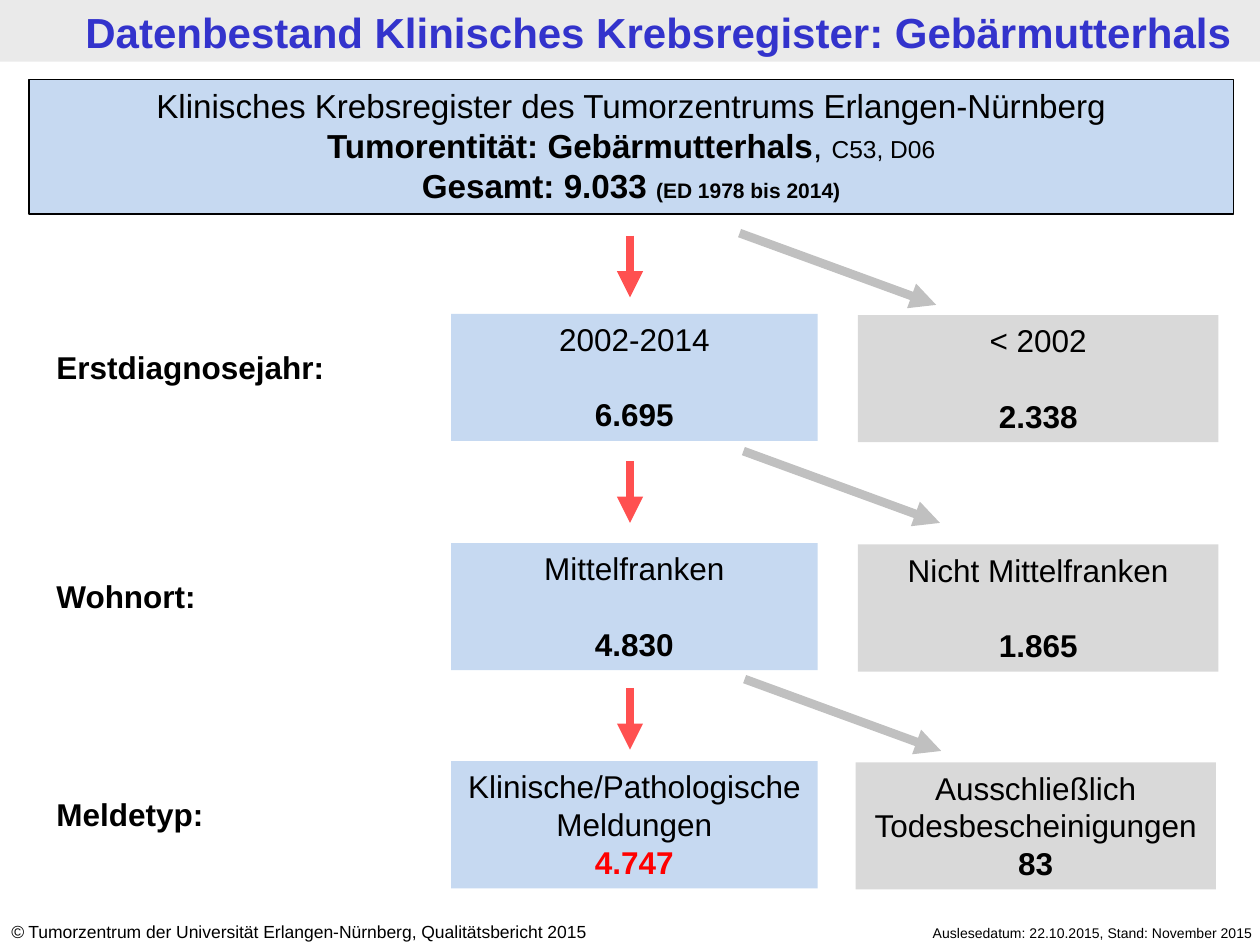
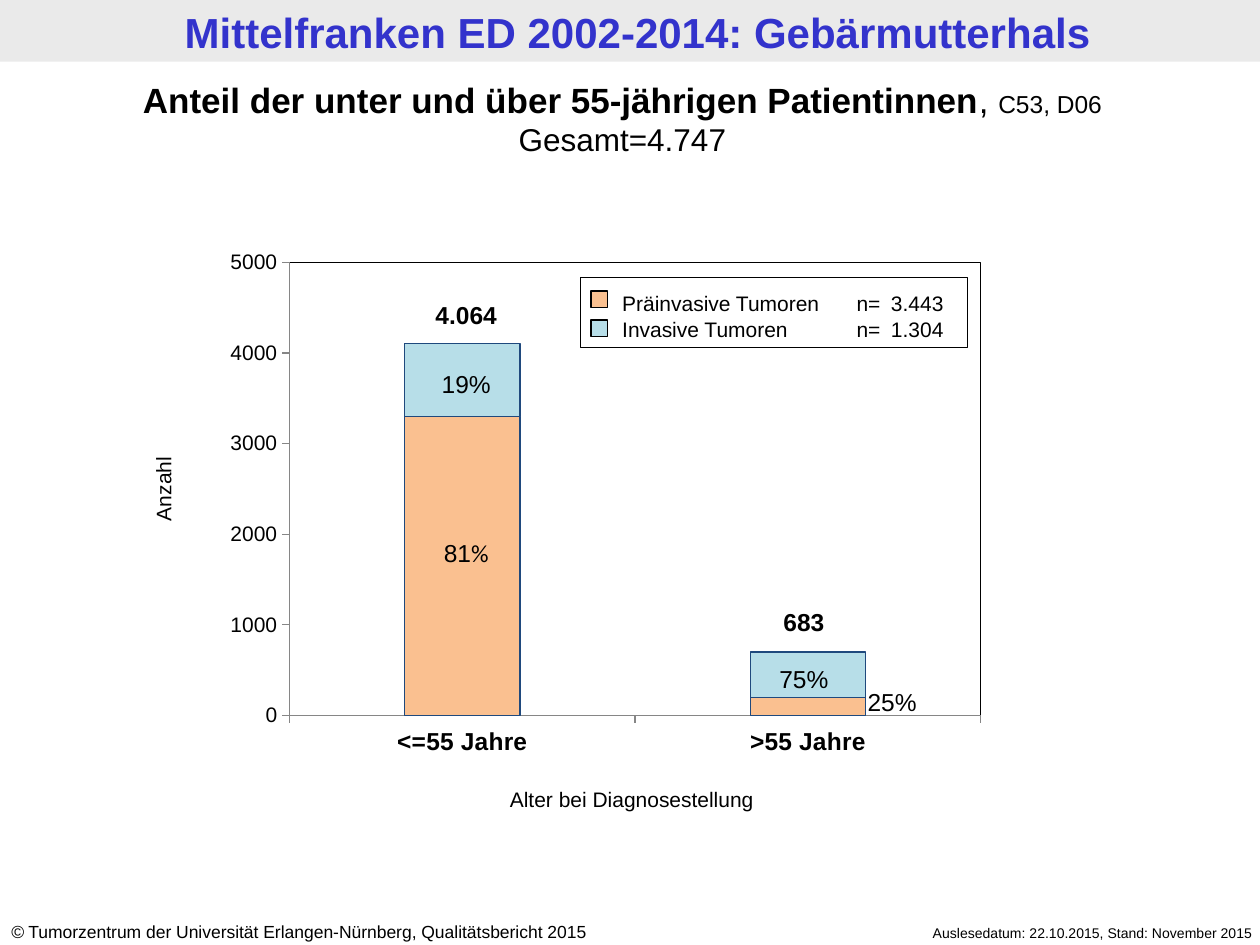
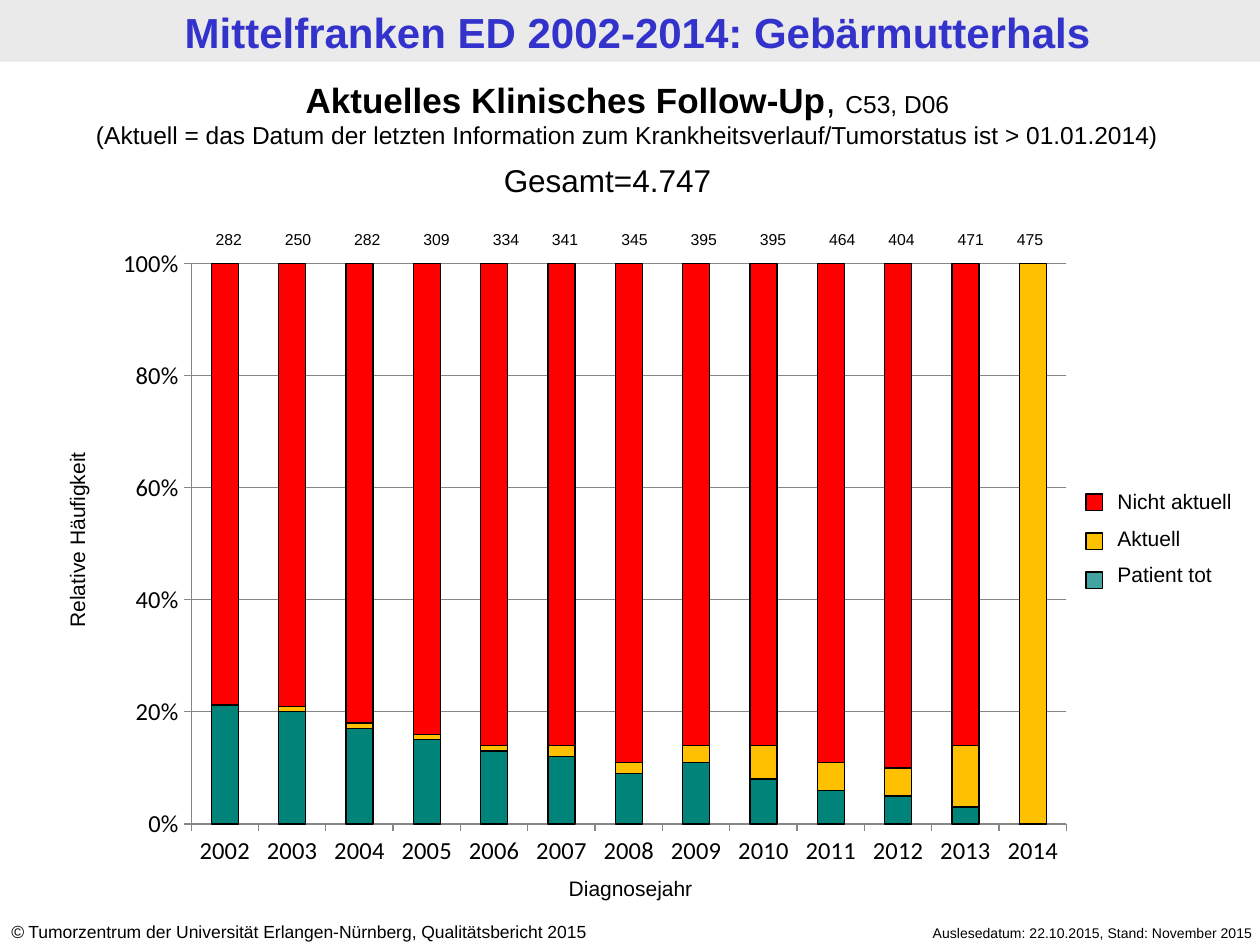
from itertools import accumulate

from pptx import Presentation
from pptx.chart.data import CategoryChartData
from pptx.dml.color import RGBColor
from pptx.enum.chart import XL_CHART_TYPE as ChartType, XL_TICK_MARK as TickMark
from pptx.enum.shapes import MSO_CONNECTOR as Connector, MSO_SHAPE as Shape
from pptx.enum.text import MSO_ANCHOR as Anchor, MSO_AUTO_SIZE as AutoSize, PP_ALIGN as Align
from pptx.oxml import parse_xml
from pptx.oxml.ns import nsdecls, qn
from pptx.util import Emu, Inches, Pt

COLORS = {
    "black": "000000", "title": "3333CC", "band": "EAEAEA",
    "included": "C6D9F1", "excluded": "D9D9D9",
    "down arrow": "FF5050", "side arrow": "C0C0C0", "result": "FF0000",
    "preinvasive": "FAC090", "invasive": "B7DEE8", "bar outline": "1F497D",
    "dead": "008378", "dead key": "008380", "current": "FFC000",
    "outdated": "FF0000", "axis": "868686",
}
FONT = "Arial"
COLUMNS, ROWS = 100, 75
BOLD = {"bold": True}
SMALL = {"size": 14}
TUMOR_CODES = [(", ", {}), ("C53, D06", SMALL)]
TOTAL = "Gesamt=4.747"


def rgb(name):
    return RGBColor.from_string(COLORS[name])


def format_font(font, **values):
    values = {"name": FONT, "color": "black", **values}
    font.color.rgb = rgb(values.pop("color"))
    if "size" in values:
        values["size"] = Pt(values["size"])
    for attribute, value in values.items():
        setattr(font, attribute, value)


def format_line(line, color, width=0.75):
    line.color.rgb = rgb(color)
    line.width = Pt(width)


class Deck:
    """Holds the shared style and the current slide; lengths are grid columns and rows."""

    def __init__(self):
        self.presentation = Presentation()
        self.presentation.slide_width = Inches(10)
        self.presentation.slide_height = Inches(7.5)
        self.slide = None

    def place(self, column, row):
        return (Emu(round(column * self.presentation.slide_width / COLUMNS)),
                Emu(round(row * self.presentation.slide_height / ROWS)))

    def frame(self, box):
        return *self.place(*box[:2]), *self.place(*box[2:])

    def new_slide(self, title, title_box=(0.6, 0.1, 100, 4.9)):
        self.slide = self.presentation.slides.add_slide(self.presentation.slide_layouts[5])
        placeholder = self.slide.shapes.title
        band = self.rectangle((0, 0, 100, 4.9), "band")
        placeholder.element.addprevious(band.element)
        for side, length in zip(("left", "top", "width", "height"), self.frame(title_box)):
            setattr(placeholder, side, length)
        self.set_text(placeholder, [title], margins=(0.09, 0.04),
                      size=24, bold=True, color="title")
        self.text((66.5, 72.9, 33.9, 2.4),
                  ["Auslesedatum: 22.10.2015, Stand: November 2015"], Align.RIGHT, size=8)
        self.text((-0.1, 72.6, 52.4, 2.7), [[
            ("©", {"italic": True}),
            (" Tumorzentrum der Universität Erlangen-Nürnberg, Qualitätsbericht 2015", {}),
        ]], Align.LEFT, size=10)

    def set_text(self, shape, paragraphs, align=Align.CENTER, gap=0, tabs=(),
                 margins=(0.1, 0.05), **base):
        """Fill a shape; a paragraph is a string or a list of (text, format) runs."""
        frame = shape.text_frame
        across, down = map(Inches, margins)
        settings = {
            "word_wrap": True, "auto_size": AutoSize.NONE, "vertical_anchor": Anchor.TOP,
            "margin_left": across, "margin_right": across,
            "margin_top": down, "margin_bottom": down,
        }
        for attribute, value in settings.items():
            setattr(frame, attribute, value)
        for index, runs in enumerate(paragraphs):
            paragraph = frame.add_paragraph() if index else frame.paragraphs[0]
            if tabs:
                stops = "".join(f'<a:tab pos="{Inches(stop)}" algn="{side}"/>'
                                for stop, side in tabs)
                paragraph._p.get_or_add_pPr().append(
                    parse_xml(f"<a:tabLst {nsdecls('a')}>{stops}</a:tabLst>"))
            paragraph.alignment = align
            if index and gap:
                paragraph.space_before = Pt(gap)
            for text, values in [(runs, {})] if isinstance(runs, str) else runs:
                run = paragraph.add_run()
                run.text = text
                format_font(run.font, **{**base, **values})

    def text(self, box, paragraphs, align=Align.CENTER, rotation=0, **style):
        shape = self.slide.shapes.add_textbox(*self.frame(box))
        shape.rotation = rotation
        self.set_text(shape, paragraphs, align, **style)

    def rectangle(self, box, fill=None, line=None, alpha=None):
        shape = self.slide.shapes.add_shape(Shape.RECTANGLE, *self.frame(box))
        shape.shadow.inherit = False
        if fill:
            shape.fill.solid()
            shape.fill.fore_color.rgb = rgb(fill)
        else:
            shape.fill.background()
        if alpha:
            color = shape.element.spPr.find(qn("a:solidFill"))[0]
            color.append(parse_xml(f'<a:alpha {nsdecls("a")} val="{alpha * 1000}"/>'))
        if line:
            format_line(shape.line, line)
        else:
            shape.line.fill.background()
        return shape

    def key(self, column, row, fill, alpha=None):
        self.rectangle((column, row, 1.3, 1.3), fill, "black", alpha)

    def arrow(self, start, across, down, color):
        end = start[0] + across, start[1] + down
        arrow = self.slide.shapes.add_connector(
            Connector.STRAIGHT, *self.place(*start), *self.place(*end))
        format_line(arrow.line, color, 5)
        properties = arrow.element.spPr
        properties.find(qn("a:ln")).append(
            parse_xml(f'<a:tailEnd {nsdecls("a")} type="triangle"/>'))
        properties.append(parse_xml(f"<a:effectLst {nsdecls('a')}/>"))

    def chart(self, box, kind, categories, series, outline, gap, unit, number_format,
              category_font, value_font):
        """Add a stacked column chart; series holds (values, color) pairs."""
        data = CategoryChartData()
        data.categories = categories
        for number, (values, _) in enumerate(series, 1):
            data.add_series(f"Series {number}", values)
        chart = self.slide.shapes.add_chart(kind, *self.frame(box), data).chart
        chart.has_title = chart.has_legend = False
        format_font(chart.font, name="Calibri", size=18)
        plot = chart.plots[0]
        plot.gap_width, plot.overlap, plot.vary_by_categories = gap, 100, False
        for bars, (_, color) in zip(plot.series, series):
            bars.invert_if_negative = False
            bars.format.fill.solid()
            bars.format.fill.fore_color.rgb = rgb(color)
            format_line(bars.format.line, outline)
        for axis, font in ((chart.category_axis, category_font),
                           (chart.value_axis, value_font)):
            axis.major_tick_mark, axis.minor_tick_mark = TickMark.OUTSIDE, TickMark.NONE
            axis.has_major_gridlines = False
            format_line(axis.format.line, "axis")
            format_font(axis.tick_labels.font, **font)
        chart.value_axis.minimum_scale = 0
        chart.value_axis.major_unit = unit
        labels = chart.value_axis.tick_labels
        labels.number_format, labels.number_format_is_linked = number_format, False
        return chart


def frame_plot(chart, **shares):
    """Fix the inner plot area as shares of the chart and outline it."""
    plot_area = chart.element.xpath("c:chart/c:plotArea")[0]
    for layout in plot_area.findall(qn("c:layout")):
        plot_area.remove(layout)
    sizes = "".join(f'<c:{name} val="{share}"/>' for name, share in shares.items())
    plot_area.insert(0, parse_xml(
        f'<c:layout {nsdecls("c")}><c:manualLayout><c:layoutTarget val="inner"/>'
        f'<c:xMode val="edge"/><c:yMode val="edge"/>{sizes}</c:manualLayout></c:layout>'))
    plot_area.append(parse_xml(
        f'<c:spPr {nsdecls("c", "a")}><a:noFill/><a:ln w="{Pt(0.75)}"><a:solidFill>'
        f'<a:srgbClr val="{COLORS["black"]}"/></a:solidFill></a:ln></c:spPr>'))


def build_selection(deck):
    deck.new_slide("Datenbestand Klinisches Krebsregister: Gebärmutterhals",
                   (3.4, 0.1, 97.7, 4.9))
    register = deck.rectangle((2.3, 6.3, 95.6, 10.7), "included", "black")
    deck.set_text(register, [
        "Klinisches Krebsregister des Tumorzentrums Erlangen-Nürnberg",
        [("Tumorentität: Gebärmutterhals", BOLD), *TUMOR_CODES],
        [("Gesamt: 9.033 ", BOLD), ("(ED 1978 bis 2014)", {"size": 12, **BOLD})],
    ], size=19)

    blank_line = 21.5
    steps = [
        # label, row, included, excluded, excluded column, gap, arrow row, side arrow start
        ("Erstdiagnosejahr:", 24.9, ("2002-2014", "6.695"), ("< 2002", "2.338"),
         68.1, blank_line, 18.7, (58.7, 18.5)),
        ("Wohnort:", 43.1, ("Mittelfranken", "4.830"), ("Nicht Mittelfranken", "1.865"),
         68.1, blank_line, 36.6, (59, 35.8)),
        ("Meldetyp:", 60.4, ("Klinische/Pathologische Meldungen", "4.747"),
         ("Ausschließlich Todesbescheinigungen", "83"), 67.9, 0, 54.6, (59.1, 53.9)),
    ]
    for label, row, included, excluded, column, gap, arrow_row, side_start in steps:
        deck.text((3.5, row + 2.2, 27.6, 4), [label], Align.LEFT, size=18, bold=True)
        count_color = "result" if label == steps[-1][0] else "black"
        for box, fill, (group, count), color in (
                ((35.8, row, 29.1, 10.1), "included", included, count_color),
                ((column, row + 0.1, 28.6, 10.1), "excluded", excluded, "black")):
            deck.set_text(deck.rectangle(box, fill),
                          [group, [(count, {"color": color, **BOLD})]], gap=gap, size=18)
        deck.arrow((50, arrow_row), 0, 4.9, "down arrow")
        deck.arrow(side_start, 15.6, 5.7, "side arrow")


def build_age_groups(deck):
    deck.new_slide("Mittelfranken ED 2002-2014: Gebärmutterhals")
    chart = deck.chart(
        (15.1, 14.2, 69.8, 46.6), ChartType.COLUMN_STACKED, ["<=55 Jahre", ">55 Jahre"],
        [((3300, 200), "preinvasive"), ((800, 500), "invasive")],
        "bar outline", 200, 1000, "0", {"size": 14, **BOLD}, {"size": 12})
    chart.value_axis.maximum_scale = 5000
    frame_plot(chart, x=0.113, y=0.142, w=0.786, h=0.772)
    deck.text((0, 5.7, 98.8, 7.4), [
        [("Anteil der unter und über 55-jährigen Patientinnen", BOLD), *TUMOR_CODES],
        [(TOTAL, {"size": 18})],
    ], size=20)

    for column, row, runs in (
            (31.9, 42.2, [("81", {}), ("%", {"name": "Calibri"})]),
            (31.9, 28.8, "19%"),
            (31.9, 23.3, [("4.064", BOLD)]),
            (65.7, 54, "25%"),
            (58.7, 52.2, "75%"),
            (58.7, 47.7, [("683", BOLD)])):
        deck.text((column, row, 10.2, 3.4), [runs], size=14)
    deck.text((33.5, 61.9, 33.3, 3), ["Alter bei Diagnosestellung"], size=12)
    deck.text((-0.1, 37.3, 26.1, 3), ["Anzahl"], rotation=270, size=12)

    deck.rectangle((46.1, 22, 30.7, 5.6), line="black")
    deck.text((48.4, 22.6, 28, 5),
              ["Präinvasive Tumoren\tn=\t3.443", "Invasive Tumoren\tn=\t1.304"],
              Align.LEFT, tabs=((1.86, "l"), (2.55, "r")), size=12)
    deck.key(46.9, 23.1, "preinvasive")
    deck.key(46.9, 25.4, "invasive")


def build_follow_up(deck):
    deck.new_slide("Mittelfranken ED 2002-2014: Gebärmutterhals")
    years = range(2002, 2015)
    chart = deck.chart(
        (8.2, 18.7, 78, 51.1), ChartType.COLUMN_STACKED_100, [str(year) for year in years],
        [((21, 20, 17, 15, 13, 12, 9, 11, 8, 6, 5, 3, 0), "dead"),
         ((0, 1, 1, 1, 1, 2, 2, 3, 6, 5, 5, 11, 100), "current"),
         ((78, 79, 82, 84, 86, 86, 89, 86, 86, 89, 90, 86, 0), "outdated")],
        "black", 150, 0.2, "0%", *[{"size": 14, "name": "Calibri"}] * 2)
    chart.value_axis.has_major_gridlines = True
    format_line(chart.value_axis.major_gridlines.format.line, "axis")

    deck.text((-0.4, 5.7, 100.4, 6.7), [
        [("Aktuelles Klinisches Follow-Up", BOLD), *TUMOR_CODES],
        [("(Aktuell = das Datum der letzten Information zum "
          "Krankheitsverlauf/Tumorstatus ist > 01.01.2014)", SMALL)],
    ], size=20)
    deck.text((39, 12.3, 22, 4), [TOTAL], Align.LEFT, size=18)
    deck.text((-5.9, 41.3, 24.1, 3.1), ["Relative Häufigkeit"], rotation=270, size=12)
    deck.text((38.8, 69, 22.5, 3.1), ["Diagnosejahr"], size=12)

    cases = (282, 250, 282, 309, 334, 341, 345, 395, 395, 464, 404, 471, 475)
    narrow_years = (2007, 2012, 2014)
    steps = (4.7 if year in narrow_years else 5.5 for year in years[1:])
    for count, column in zip(cases, accumulate(steps, initial=15.4)):
        deck.text((column, 17.7, 5.5, 2.5), [str(count)], size=9)

    deck.text((87.7, 38.3, 14.2, 9.1), ["Nicht aktuell", "Aktuell", "Patient tot"],
              Align.LEFT, gap=6.5, size=12)
    for index, (fill, alpha) in enumerate(
            (("outdated", None), ("current", None), ("dead key", 74))):
        deck.key(86.2, 39.2 + 3.1 * index, fill, alpha)


def main():
    deck = Deck()
    build_selection(deck)
    build_age_groups(deck)
    build_follow_up(deck)
    deck.presentation.save("out.pptx")


if __name__ == "__main__":
    main()
